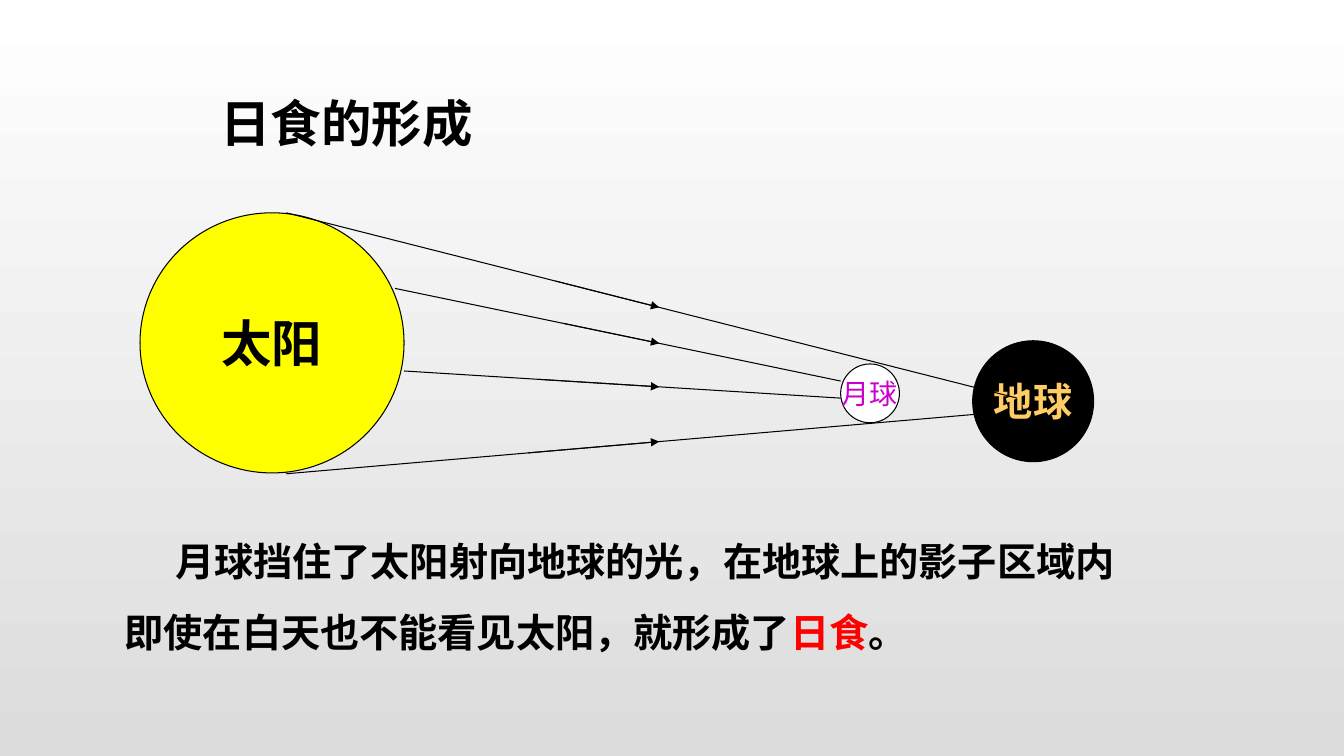
from lxml import etree
from pptx import Presentation
from pptx.dml.color import RGBColor
from pptx.enum import shapes, text
from pptx.oxml import ns
from pptx.util import Pt

BLACK = RGBColor(0x00, 0x00, 0x00)
WHITE = RGBColor(0xFF, 0xFF, 0xFF)
GREY = RGBColor(0xDC, 0xDC, 0xDC)
YELLOW = RGBColor(0xFF, 0xFF, 0x00)
PURPLE = RGBColor(0xCC, 0x00, 0xCC)
ORANGE = RGBColor(0xFF, 0xCC, 0x66)
RED = RGBColor(0xFF, 0x00, 0x00)

TITLE = "日食的形成"
CAPTION = [
    ("月球挡住了太阳射向地球的光，在地球上的影子区域内即使在白天也不能看见太阳，就形成了", BLACK),
    ("日食", RED),
    ("。", BLACK),
]
# label, (left, top, width, height), fill, text colour, text size, bold
BODIES = [
    ("太阳", (100, 152, 188.6, 185.8), YELLOW, BLACK, 36, True),
    ("月球", (600.5, 260, 42, 42), WHITE, PURPLE, 20, False),
    ("地球", (694.8, 243.4, 86.4, 86.4), BLACK, ORANGE, 28, True),
]
# ray start, ray end, x where its arrow begins
RAYS = [
    ((204.5, 152), (726.5, 284.4), 396.7),
    ((282.2, 206), (600.5, 272.2), 402.5),
    ((288.7, 265), (600.5, 284.4), 384.5),
    ((204.5, 338.4), (696.2, 296), 377.3),
]
ARROW_TIP_X = 470.9
LINE_WIDTH = Pt(0.75)


def add_run(p, content, *, size, color, font="Arial", bold=True):
    r = p.add_run()
    r.text = content
    r.font.name, r.font.size, r.font.bold = font, Pt(size), bold
    r.font.color.rgb = color


def add_box(s, left, top, width, height, wrap):
    tf = s.shapes.add_textbox(Pt(left), Pt(top), Pt(width), Pt(height)).text_frame
    tf.word_wrap = wrap
    tf.auto_size = text.MSO_AUTO_SIZE.SHAPE_TO_FIT_TEXT
    return tf.paragraphs[0]


def add_body(s, label, box, fill, color, size, bold):
    sp = s.shapes.add_shape(shapes.MSO_SHAPE.OVAL, *map(Pt, box))
    sp.shadow.inherit = False
    sp.fill.solid()
    sp.fill.fore_color.rgb = fill
    sp.line.color.rgb = BLACK
    sp.line.width = LINE_WIDTH
    tf = sp.text_frame
    tf.word_wrap = False
    tf.vertical_anchor = text.MSO_ANCHOR.MIDDLE
    p = tf.paragraphs[0]
    p.alignment = text.PP_ALIGN.CENTER
    add_run(p, label, size=size, color=color, font="Times New Roman", bold=bold)


def add_line(s, start, end, arrow=False):
    line = s.shapes.add_connector(shapes.MSO_CONNECTOR.STRAIGHT, *map(Pt, start + end))
    line.line.color.rgb = BLACK
    line.line.width = LINE_WIDTH
    if arrow:
        etree.SubElement(line.line._get_or_add_ln(), ns.qn("a:tailEnd"), type="triangle")
    etree.SubElement(line._element.spPr, ns.qn("a:effectLst"))


def point_on(start, end, x):
    """Return the point of the ray at the given x."""
    slope = (end[1] - start[1]) / (end[0] - start[0])
    return x, start[1] + slope * (x - start[0])


def main():
    prs = Presentation()
    prs.slide_width, prs.slide_height = Pt(960), Pt(540)
    s = prs.slides.add_slide(prs.slide_layouts[6])

    bg = s.background.fill
    bg.gradient()
    bg.gradient_angle = 270
    for stop, color in zip(bg.gradient_stops, (WHITE, GREY)):
        stop.color.rgb = color

    p = add_box(s, 82, 363.6, 748, 108.7, wrap=True)
    p.line_spacing = 1.5
    p._p.get_or_add_pPr().set("indent", str(Pt(36)))
    for content, color in CAPTION:
        add_run(p, content, size=28, color=color)

    for body in BODIES:
        add_body(s, *body)

    add_run(add_box(s, 150.5, 62, 197.3, 51, wrap=False), TITLE, size=36, color=BLACK)

    for start, end, arrow_x in RAYS:
        add_line(s, start, end)
        add_line(s, point_on(start, end, arrow_x), point_on(start, end, ARROW_TIP_X), arrow=True)

    prs.save("out.pptx")


if __name__ == "__main__":
    main()
